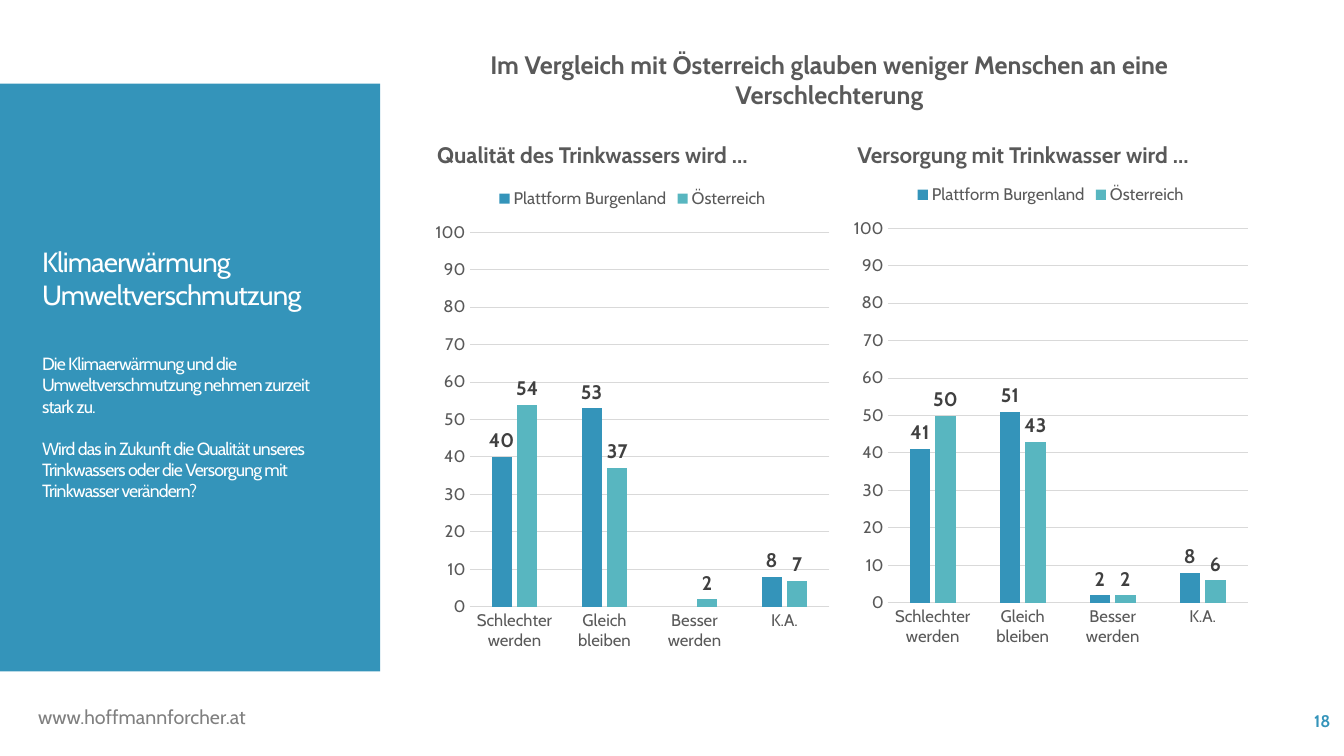
from pptx import Presentation
from pptx.chart.data import CategoryChartData
from pptx.dml.color import RGBColor
from pptx.enum.chart import XL_CHART_TYPE as ChartType
from pptx.enum.chart import XL_LABEL_POSITION as LabelPos
from pptx.enum.chart import XL_LEGEND_POSITION as LegendPos
from pptx.enum.chart import XL_TICK_MARK as Tick
from pptx.enum.shapes import MSO_SHAPE as Shape
from pptx.enum.text import MSO_ANCHOR as Anchor
from pptx.enum.text import PP_ALIGN as Align
from pptx.util import Cm, Pt

FONT = "Cabin"
COLORS = {
    "blue": "3494BA",
    "teal": "58B6C0",
    "white": "FFFFFF",
    "text": "595959",
    "label": "404040",
    "footer": "808080",
    "grid": "D9D9D9",
}
CATEGORIES = ["Schlechter\nwerden", "Gleich\nbleiben", "Besser werden", "K.A."]
QUALITY = {"Plattform Burgenland": (40, 53, None, 8), "Österreich": (54, 37, 2, 7)}
SUPPLY = {"Plattform Burgenland": (41, 51, 2, 8), "Österreich": (50, 43, 2, 6)}


def rgb(name):
    return RGBColor.from_string(COLORS[name])


def set_font(font, size, color, bold=False):
    font.name = FONT
    font.size = Pt(size)
    font.bold = bold
    font.color.rgb = rgb(color)


def add_panel(s, left, top, width, height):
    sp = s.shapes.add_shape(Shape.RECTANGLE, Cm(left), Cm(top), Cm(width), Cm(height))
    sp.shadow.inherit = False
    sp.fill.solid()
    sp.fill.fore_color.rgb = rgb("blue")
    sp.line.fill.background()


def add_text(s, box, text, size, color, bold=False, align=Align.LEFT, anchor=Anchor.TOP):
    tf = s.shapes.add_textbox(*map(Cm, box)).text_frame
    tf.word_wrap = True
    tf.vertical_anchor = anchor
    p = tf.paragraphs[0]
    p.text = text
    p.alignment = align
    set_font(p.font, size, color, bold)


def add_question(s, box, paragraphs):
    tf = s.shapes.add_textbox(*map(Cm, box)).text_frame
    tf.word_wrap = True
    tf.margin_top = tf.margin_bottom = 0
    for i, (text, size, gap) in enumerate(paragraphs):
        p = tf.paragraphs[0] if i == 0 else tf.add_paragraph()
        r = p.add_run()
        r.text = text
        r._r.get_or_add_rPr().set("spc", "-60")
        if gap:
            p.space_before = Pt(gap)
        set_font(p.font, size, "white")


def style_axis(axis):
    axis.major_tick_mark = axis.minor_tick_mark = Tick.NONE
    set_font(axis.tick_labels.font, 12, "text")


def add_bar_chart(s, left, top, values):
    data = CategoryChartData()
    data.categories = CATEGORIES
    for name, numbers in values.items():
        data.add_series(name, numbers)
    chart = s.shapes.add_chart(
        ChartType.COLUMN_CLUSTERED, Cm(left), Cm(top), Cm(10.34), Cm(12.17), data
    ).chart
    set_font(chart.font, 12, "text")
    chart.has_title = False
    chart.has_legend = True
    chart.legend.position = LegendPos.TOP
    chart.legend.include_in_layout = False
    set_font(chart.legend.font, 12, "text")

    style_axis(chart.category_axis)
    cat_line = chart.category_axis.format.line
    style_axis(chart.value_axis)
    chart.value_axis.minimum_scale = 0
    chart.value_axis.maximum_scale = 100
    chart.value_axis.major_unit = 10
    chart.value_axis.format.line.fill.background()
    for line in (cat_line, chart.value_axis.major_gridlines.format.line):
        line.color.rgb = rgb("grid")
        line.width = Pt(0.75)

    plot = chart.plots[0]
    plot.gap_width = 219
    plot.overlap = -27
    plot.vary_by_categories = False
    for series, color in zip(plot.series, ("blue", "teal")):
        series.format.fill.solid()
        series.format.fill.fore_color.rgb = rgb(color)
        labels = series.data_labels
        labels.show_value = True
        labels.position = LabelPos.OUTSIDE_END
        set_font(labels.font, 14, "label", True)


def main():
    prs = Presentation()
    prs.slide_width, prs.slide_height = Cm(33.87), Cm(19.05)
    s = prs.slides.add_slide(prs.slide_layouts[6])

    add_panel(s, 0, 2.11, 9.58, 14.81)
    add_question(s, (0.81, 6.16, 8.08, 6.6), [
        ("Klimaerwärmung Umweltverschmutzung", 19.8, 0),
        ("Die Klimaerwärmung und die Umweltverschmutzung nehmen zurzeit stark zu.", 12.6, 30),
        ("Wird das in Zukunft die Qualität unseres Trinkwassers oder die Versorgung "
         "mit Trinkwasser verändern?", 12.6, 15),
    ])
    add_text(s, (10.46, 1.12, 20.88, 1.8),
             "Im Vergleich mit Österreich glauben weniger Menschen an eine Verschlechterung",
             18, "text", True, Align.CENTER)
    add_text(s, (10.77, 2.9, 9.65, 1.47), "Qualität des Trinkwassers wird …",
             16, "text", True, anchor=Anchor.BOTTOM)
    add_text(s, (21.36, 2.9, 11.25, 1.47), "Versorgung mit Trinkwasser wird …",
             16, "text", True, anchor=Anchor.BOTTOM)
    add_bar_chart(s, 10.77, 4.47, QUALITY)
    add_bar_chart(s, 21.31, 4.37, SUPPLY)
    add_text(s, (0.71, 17.65, 6, 0.86), "www.hoffmannforcher.at", 14, "footer")
    add_text(s, (29.54, 17.65, 4.24, 1.02), "18", 12, "blue", True, Align.RIGHT, Anchor.MIDDLE)
    prs.save("out.pptx")


if __name__ == "__main__":
    main()
